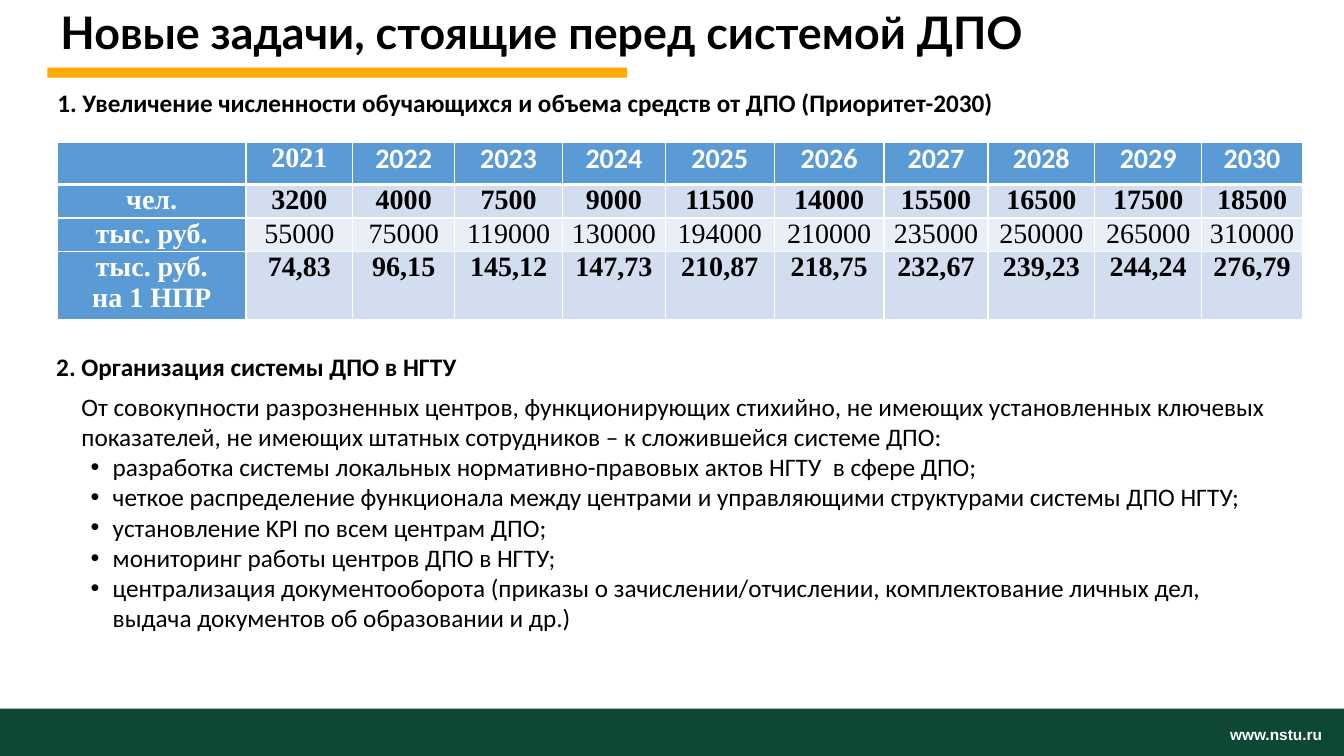
"""Build the slide on the new tasks facing the continuing education system."""
import pptx
import pptx.dml.color
import pptx.enum.shapes
import pptx.enum.text
import pptx.oxml.ns
import pptx.util
from lxml import etree
from pptx.util import Inches

RGBColor = pptx.dml.color.RGBColor
WHITE = RGBColor(0xFF, 0xFF, 0xFF)
BLACK = RGBColor(0x00, 0x00, 0x00)
GREEN = RGBColor(0x0F, 0x47, 0x36)
AMBER = RGBColor(0xFF, 0xAB, 0x00)
BLUE = RGBColor(0x5B, 0x9B, 0xD5)
BAND_DARK = RGBColor(0xD2, 0xDE, 0xEF)
BAND_LIGHT = RGBColor(0xEA, 0xEF, 0xF7)

SERIF = "Times New Roman"
SANS = "Calibri"

COLUMN_WIDTHS = [1.87, 1.06, 1.01, 1.07, 1.02, 1.08, 1.09, 1.03, 1.06, 1.06, 1]
ROW_HEIGHTS = [0.42, 0.33, 0.33, 0.67]
ROWS = [
    [""] + [str(year) for year in range(2021, 2031)],
    ["чел.", "3200", "4000", "7500", "9000", "11500",
     "14000", "15500", "16500", "17500", "18500"],
    ["тыс. руб.", "55000", "75000", "119000", "130000", "194000",
     "210000", "235000", "250000", "265000", "310000"],
    ["тыс. руб.\nна 1 НПР", "74,83", "96,15", "145,12", "147,73", "210,87",
     "218,75", "232,67", "239,23", "244,24", "276,79"],
]

INTRODUCTION = (
    "От совокупности разрозненных центров, функционирующих стихийно, "
    "не имеющих установленных ключевых показателей, не имеющих штатных "
    "сотрудников – к сложившейся системе ДПО:"
)
MEASURES = [
    "разработка системы локальных нормативно-правовых актов НГТУ  в сфере ДПО;",
    "четкое распределение функционала между центрами и управляющими "
    "структурами системы ДПО НГТУ;",
    "установление KPI по всем центрам ДПО;",
    "мониторинг работы центров ДПО в НГТУ;",
    "централизация документооборота (приказы о зачислении/отчислении, "
    "комплектование личных дел, выдача документов об образовании и др.)",
]


def add_run(paragraph, text, size, font_name, color, bold=False):
    run = paragraph.add_run()
    run.text = text
    run.font.size = pptx.util.Pt(size)
    run.font.name = font_name
    run.font.color.rgb = color
    run.font.bold = bold


def set_margins(target, horizontal, vertical):
    target.margin_left = target.margin_right = Inches(horizontal)
    target.margin_top = target.margin_bottom = Inches(vertical)


def add_bar(slide, left, top, width, height, color):
    shape = slide.shapes.add_shape(
        pptx.enum.shapes.MSO_SHAPE.RECTANGLE,
        Inches(left), Inches(top), Inches(width), Inches(height))
    shape.shadow.inherit = False
    shape.fill.solid()
    shape.fill.fore_color.rgb = color
    shape.line.fill.background()


def add_text_frame(slide, left, top, width, height):
    shape = slide.shapes.add_textbox(
        Inches(left), Inches(top), Inches(width), Inches(height))
    shape.text_frame.word_wrap = True
    return shape.text_frame


def add_title(slide, text):
    title = slide.shapes.title
    title.left, title.top = Inches(0.47), Inches(0)
    title.width, title.height = Inches(10.98), Inches(0.62)
    frame = title.text_frame
    frame.word_wrap = True
    frame.auto_size = pptx.enum.text.MSO_AUTO_SIZE.NONE
    frame.vertical_anchor = pptx.enum.text.MSO_ANCHOR.MIDDLE
    set_margins(frame, 0.13, 0.07)
    paragraph = frame.paragraphs[0]
    paragraph.alignment = pptx.enum.text.PP_ALIGN.LEFT
    add_run(paragraph, text, 32, "Lato", BLACK, bold=True)


def add_heading(slide, left, top, text):
    frame = add_text_frame(slide, left, top, 12.44, 0.4)
    add_run(frame.paragraphs[0], text, 18, SANS, BLACK, bold=True)


def add_bullet(paragraph):
    properties = paragraph._p.get_or_add_pPr()
    properties.set("marL", str(Inches(0.31)))
    properties.set("indent", str(Inches(-0.22)))
    font = etree.SubElement(properties, pptx.oxml.ns.qn("a:buFont"))
    font.set("typeface", "Arial")
    bullet = etree.SubElement(properties, pptx.oxml.ns.qn("a:buChar"))
    bullet.set("char", "•")


def add_measures(slide):
    frame = add_text_frame(slide, 0.71, 3.83, 12.08, 2.52)
    add_run(frame.paragraphs[0], INTRODUCTION, 18, SANS, BLACK)
    for measure in MEASURES:
        paragraph = frame.add_paragraph()
        add_bullet(paragraph)
        add_run(paragraph, measure, 18, SANS, BLACK)


def set_borders(cell, top_width, bottom_width):
    properties = cell._tc.get_or_add_tcPr()
    widths = {"a:lnL": 1, "a:lnR": 1, "a:lnT": top_width, "a:lnB": bottom_width}
    for tag, width in widths.items():
        line = etree.SubElement(properties, pptx.oxml.ns.qn(tag))
        line.set("w", str(pptx.util.Pt(width)))
        fill = etree.SubElement(line, pptx.oxml.ns.qn("a:solidFill"))
        color = etree.SubElement(fill, pptx.oxml.ns.qn("a:srgbClr"))
        color.set("val", str(WHITE))


def fill_cell(cell, text, row, column):
    is_label = row == 0 or column == 0
    set_borders(cell, 3 if row == 1 else 1, 3 if row == 0 else 1)
    set_margins(cell, 0.07, 0)
    cell.fill.solid()
    band = BAND_DARK if row % 2 else BAND_LIGHT
    cell.fill.fore_color.rgb = BLUE if is_label else band
    if not text:
        return
    paragraph = cell.text_frame.paragraphs[0]
    paragraph.alignment = pptx.enum.text.PP_ALIGN.CENTER
    font_name = SANS if row == 0 and column > 1 else SERIF
    for index, line in enumerate(text.split("\n")):
        if index:
            paragraph.add_line_break()
        add_run(paragraph, line, 20, font_name,
                WHITE if is_label else BLACK, bold=is_label or row != 2)


def add_targets_table(slide):
    table = slide.shapes.add_table(
        len(ROWS), len(COLUMN_WIDTHS), Inches(0.57), Inches(1.41),
        Inches(sum(COLUMN_WIDTHS)), Inches(sum(ROW_HEIGHTS))).table
    for column, width in zip(table.columns, COLUMN_WIDTHS):
        column.width = Inches(width)
    for row, height in zip(table.rows, ROW_HEIGHTS):
        row.height = Inches(height)
    for row, texts in enumerate(ROWS):
        for column, text in enumerate(texts):
            fill_cell(table.cell(row, column), text, row, column)


def add_footer(slide):
    add_bar(slide, 0, 7.03, 13.33, 0.47, GREEN)
    frame = add_text_frame(slide, 12.2, 7.19, 0.94, 0.16)
    frame.word_wrap = False
    set_margins(frame, 0, 0)
    add_run(frame.paragraphs[0], "www.nstu.ru", 11, "Arial", WHITE, bold=True)


def main():
    presentation = pptx.Presentation()
    presentation.slide_width = Inches(13.33)
    presentation.slide_height = Inches(7.5)
    slide = presentation.slides.add_slide(presentation.slide_layouts[5])
    add_footer(slide)
    add_title(slide, "Новые задачи, стоящие перед системой ДПО")
    add_bar(slide, 0.47, 0.67, 5.75, 0.1, AMBER)
    add_heading(slide, 0.47, 0.82, "1. Увеличение численности обучающихся "
                "и объема средств от ДПО (Приоритет-2030)")
    add_targets_table(slide)
    add_heading(slide, 0.46, 3.44, "2. Организация системы ДПО в НГТУ")
    add_measures(slide)
    presentation.save("out.pptx")


if __name__ == "__main__":
    main()
